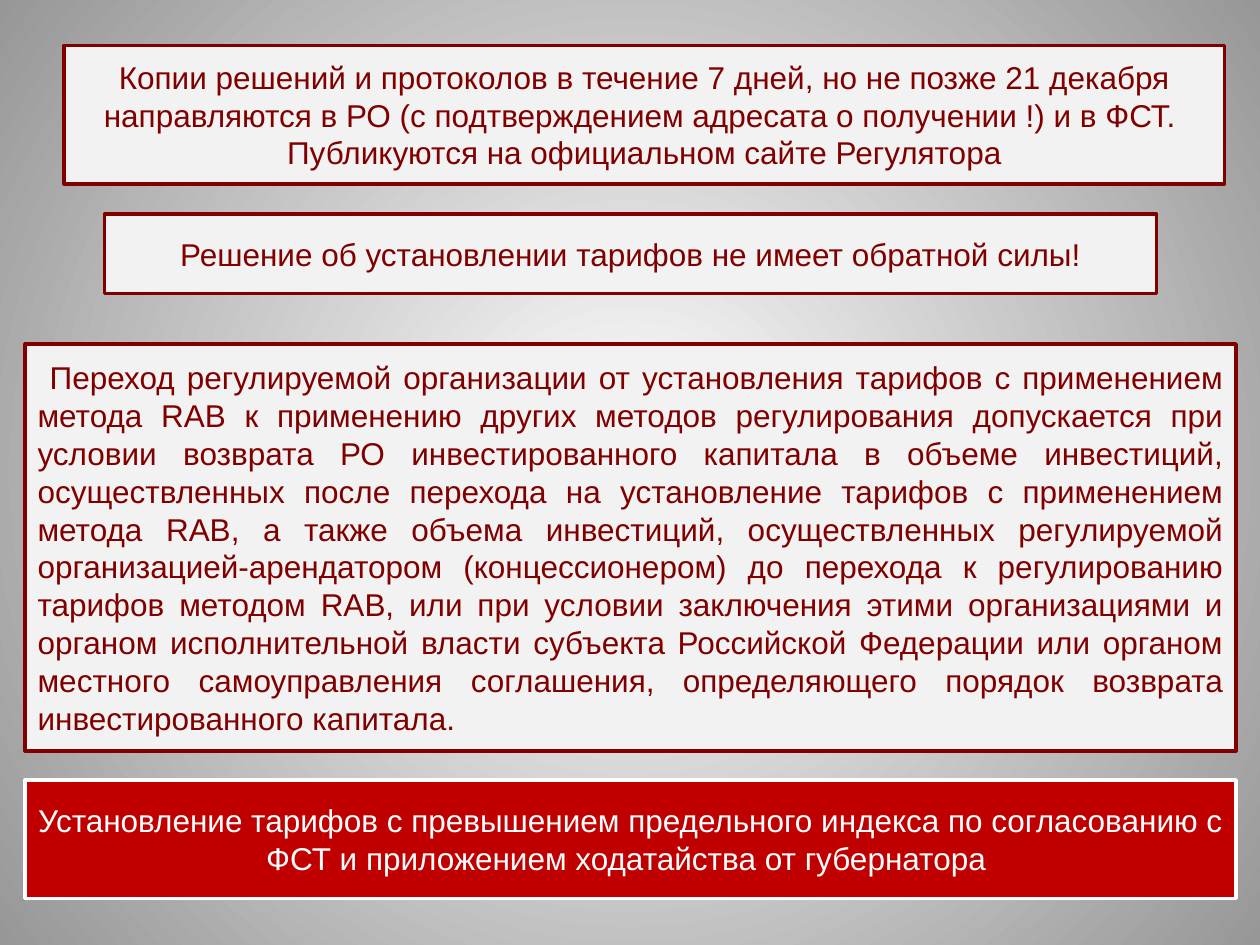
from lxml.etree import SubElement
from pptx import Presentation
from pptx.dml.color import RGBColor
from pptx.enum.shapes import MSO_SHAPE
from pptx.enum.text import MSO_ANCHOR, PP_ALIGN
from pptx.oxml.ns import qn
from pptx.util import Inches, Pt

COLORS = {
    "maroon": "800000",
    "red": "C00000",
    "white": "FFFFFF",
    "panel": "F2F2F2",
    "edge": "979797",
}


def color(name):
    return RGBColor.from_string(COLORS[name])


deck = Presentation()
deck.slide_width, deck.slide_height = Inches(10), Inches(7.5)
page = deck.slides.add_slide(deck.slide_layouts[6])

# Radial background, white in the centre and grey at the corners
background = page.background.fill
background.gradient()
for stop, name, position in zip(background.gradient_stops, ("white", "edge"), (0, 1)):
    stop.color.rgb = color(name)
    stop.position = position
gradient = page._element.find(".//" + qn("a:gradFill"))
gradient.remove(gradient.find(qn("a:lin")))
radial = SubElement(gradient, qn("a:path"), {"path": "circle"})
SubElement(radial, qn("a:fillToRect"), {side: "50000" for side in "ltrb"})

NOTICE = ("panel", "maroon", "maroon")
WARNING = ("red", "white", "white")

# Left, top, width, height in inches; fill, line and text colours; alignment; text
panels = [
    ((0.51, 0.36, 9.21, 1.1), NOTICE, PP_ALIGN.CENTER,
     "Копии решений и протоколов в течение 7 дней, но не позже 21 декабря "
     "направляются в РО (с подтверждением адресата о получении !) и в ФСТ. \n"
     "Публикуются на официальном сайте Регулятора"),
    ((0.83, 1.7, 8.35, 0.63), NOTICE, PP_ALIGN.CENTER,
     "Решение об установлении тарифов не имеет обратной силы!"),
    ((0.2, 2.73, 9.61, 3.23), NOTICE, PP_ALIGN.JUSTIFY,
     " Переход регулируемой организации от установления тарифов с применением "
     "метода RAB к применению других методов регулирования допускается при "
     "условии возврата РО инвестированного капитала в объеме инвестиций, "
     "осуществленных после перехода на установление тарифов с применением "
     "метода RAB, а также объема инвестиций, осуществленных регулируемой "
     "организацией-арендатором (концессионером) до перехода к регулированию "
     "тарифов методом RAB, или при условии заключения этими организациями и "
     "органом исполнительной власти субъекта Российской Федерации или органом "
     "местного самоуправления соглашения, определяющего порядок возврата "
     "инвестированного капитала."),
    ((0.2, 6.19, 9.61, 0.94), WARNING, PP_ALIGN.CENTER,
     "Установление тарифов с превышением предельного индекса по согласованию с "
     "ФСТ и приложением ходатайства от губернатора "),
]

for place, (fill, line, ink), alignment, text in panels:
    box = page.shapes.add_shape(MSO_SHAPE.RECTANGLE, *map(Inches, place))
    box.shadow.inherit = False
    box.fill.solid()
    box.fill.fore_color.rgb = color(fill)
    box.line.color.rgb = color(line)
    box.line.width = Pt(2)
    box.text_frame.text = text
    box.text_frame.word_wrap = True
    box.text_frame.vertical_anchor = MSO_ANCHOR.MIDDLE
    for paragraph in box.text_frame.paragraphs:
        paragraph.alignment = alignment
        for span in paragraph.runs:
            span.font.name = "Arial"
            span.font.size = Pt(18)
            span.font.color.rgb = color(ink)

deck.save("out.pptx")
